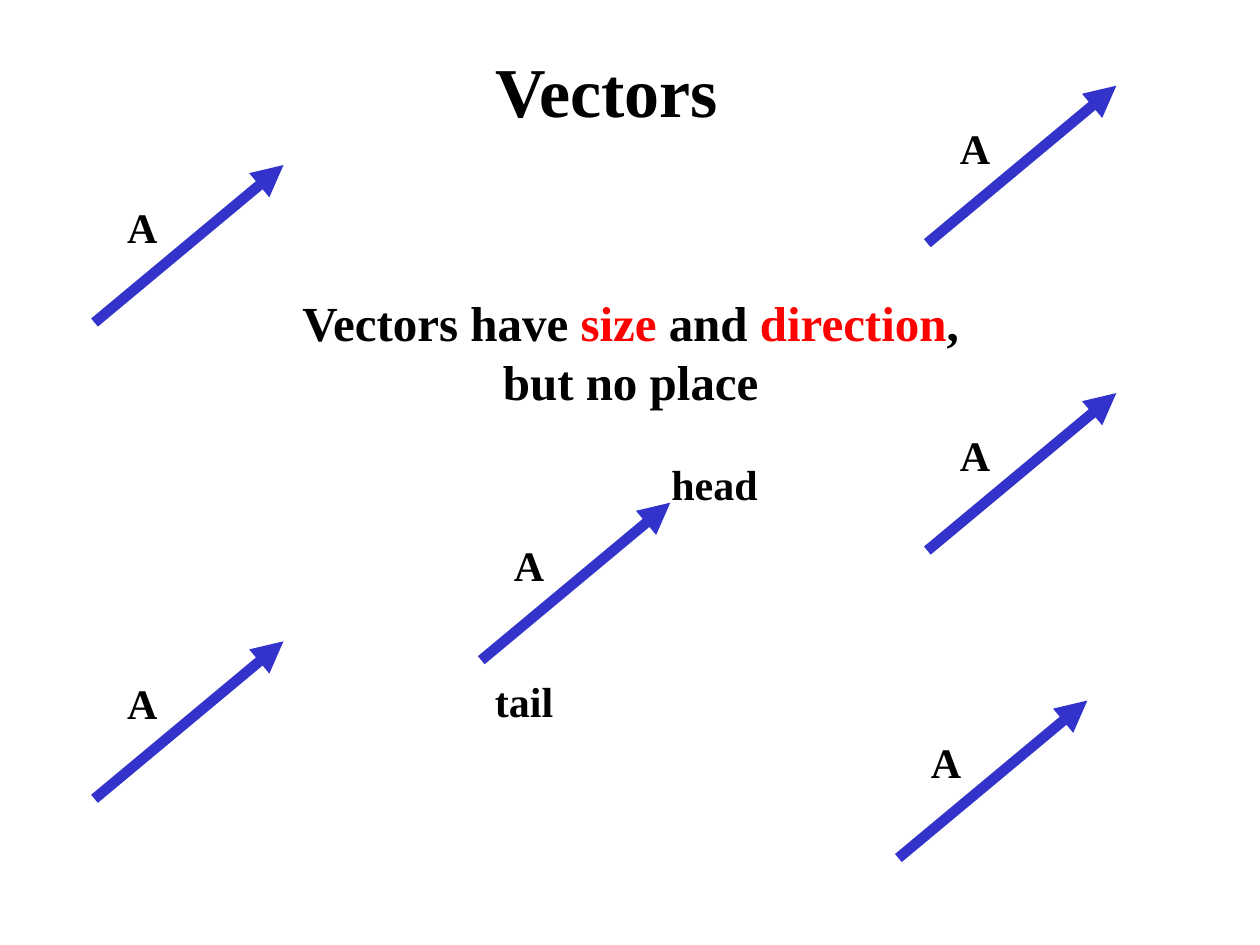
"""Builds a slide showing that vectors have size and direction but no place."""
from dataclasses import dataclass

from lxml import etree
from pptx import Presentation
from pptx import util as u
from pptx.dml.color import RGBColor
from pptx.enum import shapes, text
from pptx.oxml.ns import qn


@dataclass(frozen=True)
class Theme:
    """Colours, font and type sizes of the slide."""
    ink: RGBColor = RGBColor(0x00, 0x00, 0x00)
    accent: RGBColor = RGBColor(0xFF, 0x00, 0x00)
    arrow: RGBColor = RGBColor(0x33, 0x33, 0xCC)
    font: str = "Times New Roman"
    title: u.Pt = u.Pt(40)
    statement: u.Pt = u.Pt(28)
    label: u.Pt = u.Pt(24)
    stroke: u.Pt = u.Pt(6)


THEME = Theme()
RUN_X, RISE_Y = 1.5, 1.25
TAILS = [(0.75, 2.56), (3.82, 5.24), (7.36, 4.37), (7.13, 6.81), (7.36, 1.93), (0.75, 6.34)]
STATEMENT = [
    [("Vectors have ", False), ("size", True), (" and ", False), ("direction", True), (",", False)],
    [("but no place", False)],
]


def style(paragraph, size, align=text.PP_ALIGN.LEFT):
    """Apply the bold theme font to a paragraph."""
    paragraph.alignment = align
    font = paragraph.font
    font.name, font.size, font.bold = THEME.font, size, True
    font.color.rgb = THEME.ink


def fit(frame, wrap):
    """Let a text frame grow with its text, from the top."""
    frame.word_wrap = wrap
    frame.auto_size = text.MSO_AUTO_SIZE.SHAPE_TO_FIT_TEXT
    frame.vertical_anchor = text.MSO_ANCHOR.TOP


def add_title(slide, wording):
    """Place and format the title."""
    title = slide.shapes.title
    title.left, title.top = u.Inches(3.83), u.Inches(0.33)
    title.width, title.height = u.Inches(2.02), u.Inches(0.77)
    title.text_frame.text = wording
    fit(title.text_frame, wrap=False)
    style(title.text_frame.paragraphs[0], THEME.title)


def add_label(parent, wording, left, top, width):
    """Add a one-line label to a slide or group."""
    label = parent.shapes.add_textbox(*map(u.Inches, (left, top, width, 0.5)))
    label.text_frame.text = wording
    fit(label.text_frame, wrap=True)
    style(label.text_frame.paragraphs[0], THEME.label)


def add_statement(slide, lines):
    """Add the centred statement with its key words in the accent colour."""
    box = slide.shapes.add_textbox(*map(u.Inches, (2.27, 2.27, 5.47, 1.04)))
    frame = box.text_frame
    fit(frame, wrap=False)
    for index, line in enumerate(lines):
        paragraph = frame.add_paragraph() if index else frame.paragraphs[0]
        style(paragraph, THEME.statement, text.PP_ALIGN.CENTER)
        for wording, is_key in line:
            run = paragraph.add_run()
            run.text = wording
            if is_key:
                run.font.color.rgb = THEME.accent


def add_vector(slide, tail_x, tail_y):
    """Add one grouped copy of vector A, starting at its tail."""
    vector = slide.shapes.add_group_shape()
    ends = (tail_x, tail_y, tail_x + RUN_X, tail_y - RISE_Y)
    arrow = vector.shapes.add_connector(shapes.MSO_CONNECTOR.STRAIGHT, *map(u.Inches, ends))
    arrow.line.color.rgb = THEME.arrow
    arrow.line.width = THEME.stroke
    etree.SubElement(arrow.line._get_or_add_ln(), qn("a:tailEnd"), type="triangle")
    etree.SubElement(arrow._element.spPr, qn("a:effectLst"))
    add_label(vector, "A", tail_x + 0.16, tail_y - 1.01, 0.39)


def main():
    """Build and save the slide."""
    deck = Presentation()
    deck.slide_width, deck.slide_height = u.Inches(10), u.Inches(7.5)
    slide = deck.slides.add_slide(deck.slide_layouts.get_by_name("Title Only"))
    add_statement(slide, STATEMENT)
    add_title(slide, "Vectors")
    add_label(slide, "tail", 3.83, 5.31, 1.64)
    add_label(slide, "head", 5.23, 3.59, 1.41)
    for tail in TAILS:
        add_vector(slide, *tail)
    deck.save("out.pptx")


if __name__ == "__main__":
    main()
